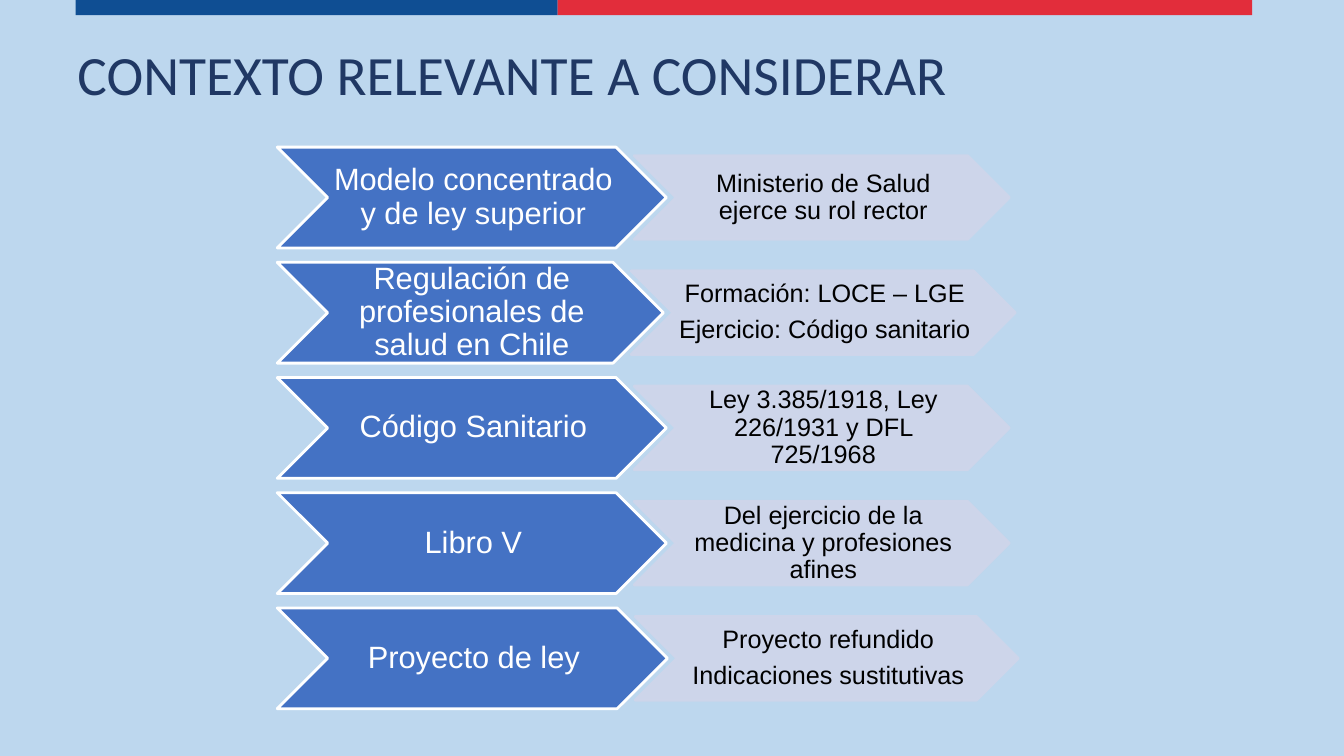
import pptx
import pptx.dml.color
import pptx.enum.shapes
import pptx.enum.text
import pptx.oxml
import pptx.oxml.ns
import pptx.util

Inches, Pt = pptx.util.Inches, pptx.util.Pt
SHAPE = pptx.enum.shapes.MSO_SHAPE
ALIGN = pptx.enum.text.PP_ALIGN
MIDDLE = pptx.enum.text.MSO_ANCHOR.MIDDLE

THEME = {
    "background": "BDD7EE",
    "title": {"font": "Calibri", "size": 39.6, "color": "203864"},
    "topic": {"font": "Arial", "size": 22, "color": "FFFFFF",
              "fill": "4472C4", "line": "FFFFFF", "opacity": 100, "margin": 0.02},
    "detail": {"font": "Arial", "size": 18, "color": "000000",
               "fill": "CFD5EA", "line": "CFD5EA", "opacity": 90, "margin": 0.01},
}


def rgb(value):
    return pptx.dml.color.RGBColor.from_string(value)


def write(frame, lines, style, margins, align):
    settings = dict(zip(("margin_left", "margin_top", "margin_right", "margin_bottom"),
                        map(Inches, margins)), word_wrap=True, vertical_anchor=MIDDLE)
    for name, value in settings.items():
        setattr(frame, name, value)
    for index, line in enumerate(lines):
        para = frame.paragraphs[0] if index == 0 else frame.add_paragraph()
        span = para.add_run()
        span.text = line
        para.alignment, para.line_spacing = align, 0.9
        if index < len(lines) - 1:
            para.space_after = Pt(0.35 * style["size"])
        for name, value in {"name": style["font"], "size": Pt(style["size"])}.items():
            setattr(span.font, name, value)
        span.font.color.rgb = rgb(style["color"])


deck = pptx.Presentation()
deck.slide_width, deck.slide_height = Inches(13.33), Inches(7.5)
page = deck.slides.add_slide(deck.slide_layouts[6])
page.background.fill.solid()
page.background.fill.fore_color.rgb = rgb(THEME["background"])

# Two-colour band along the top edge
for left, width, color in [(0.75, 4.78, "0F4E93"), (5.53, 6.89, "E22D3B")]:
    band = page.shapes.add_shape(SHAPE.RECTANGLE, Inches(left), 0, Inches(width), Inches(0.15))
    band.shadow.inherit = False
    band.fill.solid()
    band.fill.fore_color.rgb = rgb(color)
    band.line.fill.background()

# Title
box = page.shapes.add_textbox(Inches(0.67), Inches(0.47), Inches(9.68), Inches(0.6))
write(box.text_frame, ["CONTEXTO RELEVANTE A CONSIDERAR"], THEME["title"],
      (0.1, 0.05, 0.1, 0.05), ALIGN.LEFT)

# Rows: topic, topic width, detail lines, detail width
rows = [
    ("Modelo concentrado y de ley superior", 3.86,
     ["Ministerio de Salud ejerce su rol rector"], 3.72),
    ("Regulación de profesionales de salud en Chile", 3.83,
     ["Formación: LOCE – LGE", "Ejercicio: Código sanitario"], 3.81),
    ("Código Sanitario", 3.86, ["Ley 3.385/1918, Ley 226/1931 y DFL 725/1968"], 3.72),
    ("Libro V", 3.86, ["Del ejercicio de la medicina y profesiones afines"], 3.72),
    ("Proyecto de ley", 3.87, ["Proyecto refundido", "Indicaciones sustitutivas"], 3.8),
]
ROW_LEFT, ROW_TOP = 2.75, 1.46
TOPIC_HEIGHT, DETAIL_HEIGHT, OVERLAP = 1, 0.83, 0.32
ROW_STEP = 8 / 7 * TOPIC_HEIGHT

# Chevron pairs: each detail is centred on its topic and tucked under the tip
for row, (topic, topic_width, details, detail_width) in enumerate(rows):
    top = ROW_TOP + row * ROW_STEP
    pair = [
        ("topic", [topic], ROW_LEFT, top, topic_width, TOPIC_HEIGHT),
        ("detail", details, ROW_LEFT + topic_width - OVERLAP,
         top + (TOPIC_HEIGHT - DETAIL_HEIGHT) / 2, detail_width, DETAIL_HEIGHT),
    ]
    for kind, lines, *place in pair:
        style = THEME[kind]
        chevron = page.shapes.add_shape(SHAPE.CHEVRON, *map(Inches, place))
        chevron.shadow.inherit = False
        chevron.fill.solid()
        chevron.fill.fore_color.rgb = rgb(style["fill"])
        chevron.line.color.rgb = rgb(style["line"])
        chevron.line.width = Pt(2)
        # Opacity of fill and outline
        if style["opacity"] < 100:
            for color in chevron.element.spPr.iter(pptx.oxml.ns.qn("a:srgbClr")):
                color.append(pptx.oxml.parse_xml(
                    f'<a:alpha {pptx.oxml.ns.nsdecls("a")} val="{style["opacity"] * 1000}"/>'))
        write(chevron.text_frame, lines, style,
              (0.03, style["margin"], 0, style["margin"]), ALIGN.CENTER)

deck.save("out.pptx")
